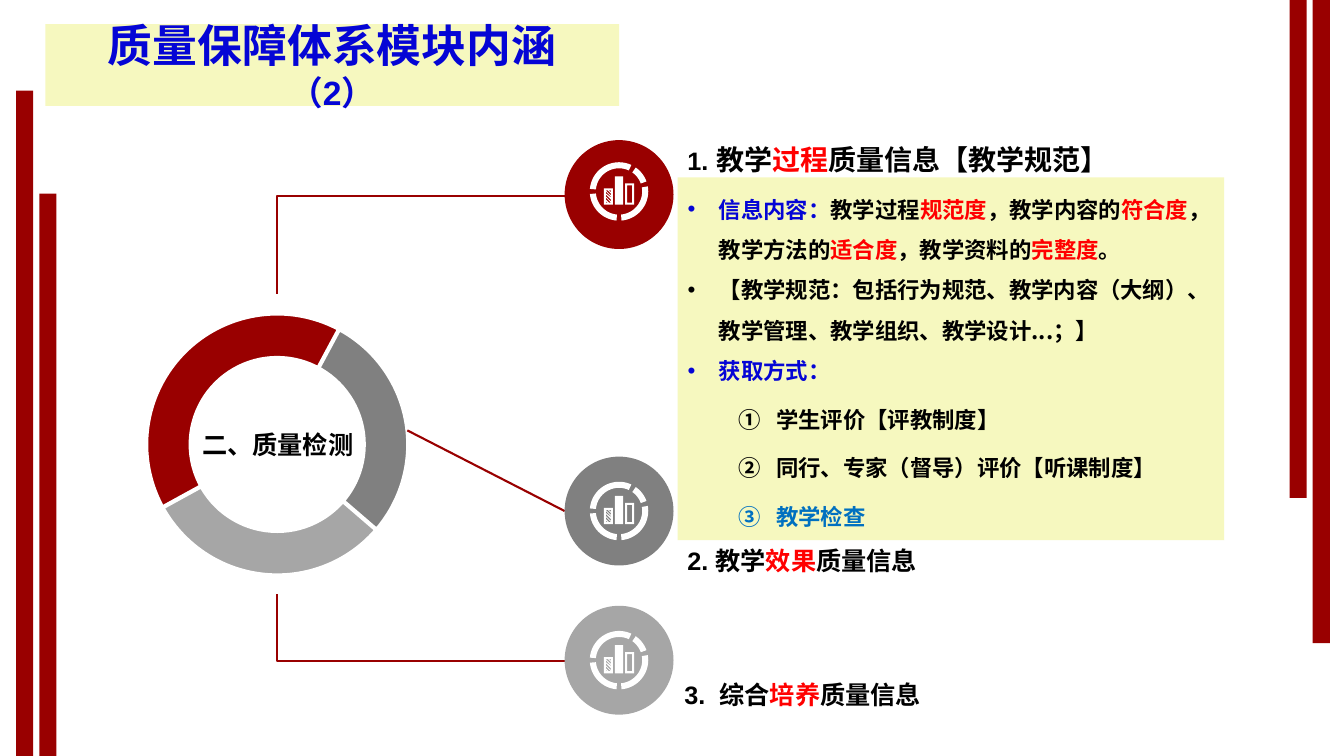
from math import cos, radians, sin

from lxml.etree import SubElement
from pptx import Presentation
from pptx.dml.color import RGBColor
from pptx.enum.shapes import MSO_CONNECTOR, MSO_SHAPE
from pptx.enum.text import MSO_ANCHOR, MSO_AUTO_SIZE, PP_ALIGN
from pptx.oxml.ns import qn
from pptx.util import Inches, Pt

RED_DARK = RGBColor(0x99, 0x00, 0x00)
RED = RGBColor(0xFF, 0x00, 0x00)
GREY_DARK = RGBColor(0x80, 0x80, 0x80)
GREY_LIGHT = RGBColor(0xA6, 0xA6, 0xA6)
CREAM = RGBColor(0xF6, 0xF8, 0xBF)
BLUE = RGBColor(0x05, 0x05, 0xD5)
SKY = RGBColor(0x00, 0x70, 0xC0)
BLACK = RGBColor(0x00, 0x00, 0x00)
WHITE = RGBColor(0xFF, 0xFF, 0xFF)

LATIN = "Arial"
CHINESE = "Noto Sans CJK SC"

BADGE_LEFT, BADGE_SIZE = 5.6, 1.08
RING = (1.45, 3.11, 2.6, 2.6)

SIDE_BARS = [(0.16, 0.9, 6.6), (0.39, 1.92, 5.58), (12.79, 0, 4.94), (13.02, 0, 6.38)]

# top of badge, top of icon, colour
BADGES = [(1.39, 1.61, RED_DARK), (4.53, 4.78, GREY_DARK), (6.01, 6.26, GREY_LIGHT)]

# kind, begin, end
LINKS = [
    (MSO_CONNECTOR.ELBOW, (5.6, 1.94), (2.75, 2.92)),
    (MSO_CONNECTOR.STRAIGHT, (5.6, 5.07), (4.04, 4.27)),
    (MSO_CONNECTOR.ELBOW, (5.6, 6.56), (2.75, 5.89)),
]

# place, size, spans
HEADINGS = [
    ((6.72, 1.36, 4.7, 0.49), 20,
     [("1.", BLACK, 18), (" 教学", BLACK), ("过程", RED), ("质量信息【教学规范】", BLACK)]),
    ((6.72, 5.36, 4.4, 0.4), 18, [("2. 教学", BLACK), ("效果", RED), ("质量信息", BLACK)]),
    ((6.69, 6.69, 4.4, 0.4), 18, [("3.  综合", BLACK), ("培养", RED), ("质量信息", BLACK)]),
]

# level, space after, spans
DETAILS = [
    (0, 0, [("信息内容：", BLUE), ("教学过程", BLACK), ("规范度", RED), ("，教学内容的", BLACK),
            ("符合度", RED), ("，教学方法的", BLACK), ("适合度", RED),
            ("，教学资料的", BLACK), ("完整度", RED), ("。", BLACK)]),
    (0, 0, [("【教学规范：包括行为规范、教学内容（大纲）、"
             "教学管理、教学组织、教学设计...；】", BLACK)]),
    (0, 6, [("获取方式：", BLUE)]),
    (1, 6, [("学生评价【评教制度】", BLACK)]),
    (1, 6, [("同行、专家（督导）评价【听课制度】", BLACK)]),
    (1, 6, [("教学检查", SKY)]),
]

# icon parts, in inches from the icon's corner
ICON_RADIUS, ICON_HOLE = 0.29, 0.23
ICON_ARCS = [(95, 175), (-10, 85), (-55, -20), (185, 295)]
ICON_BARS = [(0.14, 0.26, 0.09, 0.16), (0.25, 0.14, 0.08, 0.28),
             (0.35, 0.21, 0.09, 0.21), (0.37, 0.23, 0.05, 0.17)]
ICON_HATCHES = [
    [(0.16, 0.39), (0.16, 0.4), (0.18, 0.4)],
    [(0.16, 0.35), (0.16, 0.37), (0.19, 0.4), (0.21, 0.4)],
    [(0.16, 0.32), (0.16, 0.34), (0.21, 0.39), (0.21, 0.37)],
    [(0.16, 0.29), (0.16, 0.31), (0.21, 0.35), (0.21, 0.34)],
    [(0.16, 0.28), (0.21, 0.33), (0.21, 0.31), (0.18, 0.28)],
    [(0.19, 0.28), (0.21, 0.3), (0.21, 0.28)],
]


def set_all(target, values):
    for name, value in values.items():
        setattr(target, name, value)


def move(shape, place):
    set_all(shape, dict(zip(("left", "top", "width", "height"), map(Inches, place))))


def paint(shape, colour, outline=None):
    shape.fill.solid()
    shape.fill.fore_color.rgb = colour
    if outline:
        shape.line.color.rgb = outline
        shape.line.width = Pt(3)
    else:
        shape.line.fill.background()
    shape.shadow.inherit = False


def add_shape(page, kind, place, colour, outline=None, adjustments=()):
    shape = page.shapes.add_shape(kind, *map(Inches, place))
    for index, value in enumerate(adjustments):
        shape.adjustments[index] = value
    paint(shape, colour, outline)
    return shape


def set_geometry(placeholder, preset):
    """Give a placeholder its own outline, right after its position."""
    geometry = SubElement(placeholder._element.spPr, qn("a:prstGeom"), prst=preset)
    SubElement(geometry, qn("a:avLst"))


def add_spans(para, spans, size, latin=LATIN):
    """Each span is text and colour, with its own size if it differs."""
    for text, colour, *own_size in spans:
        span = para.add_run()
        span.text = text
        set_all(span.font, {"name": latin, "bold": True,
                            "size": Pt(own_size[0] if own_size else size)})
        span.font.color.rgb = colour
        SubElement(span._r.get_or_add_rPr(), qn("a:ea"), typeface=CHINESE)


def set_bullet(para, level):
    properties = para._p.get_or_add_pPr()
    margin, indent = [(0.31, -0.31), (0.88, -0.38)][level]
    properties.set("marL", str(Inches(margin)))
    properties.set("indent", str(Inches(indent)))
    if level:
        SubElement(properties, qn("a:buFont"), typeface="+mj-lt")
        SubElement(properties, qn("a:buAutoNum"), type="circleNumDbPlain")
    else:
        SubElement(properties, qn("a:buFont"), typeface=LATIN)
        SubElement(properties, qn("a:buChar"), char="•")


def fill_title(title):
    move(title, (0.45, 0.24, 5.69, 0.81))
    set_geometry(title, "roundRect")
    paint(title, CREAM)
    set_all(title.text_frame, {
        "word_wrap": True, "auto_size": MSO_AUTO_SIZE.NONE,
        "vertical_anchor": MSO_ANCHOR.MIDDLE,
        "margin_left": Inches(0.3), "margin_right": Inches(0.3)})
    para = title.text_frame.paragraphs[0]
    para.alignment = PP_ALIGN.CENTER
    add_spans(para, [("质量保障体系模块内涵", BLUE), ("（2）", BLUE, 24)], 32)


def fill_details(body):
    move(body, (6.72, 1.76, 5.42, 3.6))
    set_geometry(body, "rect")
    paint(body, CREAM)
    frame = body.text_frame
    set_all(frame, {"word_wrap": True, "auto_size": MSO_AUTO_SIZE.NONE,
                    "vertical_anchor": MSO_ANCHOR.TOP})
    for index, (level, after, spans) in enumerate(DETAILS):
        para = frame.add_paragraph() if index else frame.paragraphs[0]
        set_all(para, {"level": level, "line_spacing": 1.5, "space_before": Pt(0),
                       "space_after": Pt(after), "alignment": PP_ALIGN.LEFT})
        set_bullet(para, level)
        add_spans(para, spans, 16, CHINESE)


def add_heading(page, place, size, spans):
    box = page.shapes.add_textbox(*map(Inches, place))
    box.text_frame.word_wrap = True
    add_spans(box.text_frame.paragraphs[0], spans, size)


def add_ring(page):
    disc = add_shape(page, MSO_SHAPE.OVAL, (1.27, 2.92, 2.97, 2.97), WHITE)
    disc.text_frame.vertical_anchor = MSO_ANCHOR.MIDDLE
    para = disc.text_frame.paragraphs[0]
    para.alignment = PP_ALIGN.CENTER
    add_spans(para, [("二、质量检测", BLACK)], 18)
    add_shape(page, MSO_SHAPE.DONUT, RING, RED_DARK, WHITE, [0.17])
    add_shape(page, MSO_SHAPE.BLOCK_ARC, RING, GREY_LIGHT, WHITE, [211.17, 90.72, 0.17])
    add_shape(page, MSO_SHAPE.BLOCK_ARC, RING, GREY_DARK, WHITE, [178.95, 24.43, 0.17])


def add_link(page, kind, begin, end):
    link = page.shapes.add_connector(kind, *map(Inches, begin + end))
    link.line.color.rgb = RED_DARK
    link.line.width = Pt(1.5)
    properties = link._element.spPr
    SubElement(properties, qn("a:effectLst"))
    if kind == MSO_CONNECTOR.ELBOW:
        properties.find(qn("a:prstGeom")).set("prst", "bentConnector2")


def arc_outline(start, stop):
    def points(radius, angles):
        return [(ICON_RADIUS + radius * cos(radians(angle)),
                 ICON_RADIUS + radius * sin(radians(angle))) for angle in angles]
    angles = range(start, stop + 1, 5)
    return points(ICON_RADIUS, angles) + points(ICON_HOLE, reversed(angles))


def bar_outline(left, top, width, height):
    right, bottom = left + width, top + height
    return [(left, top), (right, top), (right, bottom), (left, bottom)]


def add_icon(page, left, top):
    outlines = [arc_outline(*arc) for arc in ICON_ARCS]
    outlines += [bar_outline(*bar) for bar in ICON_BARS] + ICON_HATCHES
    outlines = [[(Inches(left + x), Inches(top + y)) for x, y in outline]
                for outline in outlines]
    builder = page.shapes.build_freeform(*outlines[0][0])
    for index, (first, *others) in enumerate(outlines):
        if index:
            builder.move_to(*first)
        builder.add_line_segments(others, close=True)
    paint(builder.convert_to_shape(), WHITE)


def main():
    deck = Presentation()
    set_all(deck, {"slide_width": Inches(13.33), "slide_height": Inches(7.5)})
    page = deck.slides.add_slide(deck.slide_layouts[1])
    for left, top, height in SIDE_BARS:
        add_shape(page, MSO_SHAPE.RECTANGLE, (left, top, 0.17, height), RED_DARK)
    fill_title(page.shapes.title)
    fill_details(page.placeholders[1])
    add_ring(page)
    for link in LINKS:
        add_link(page, *link)
    for top, icon_top, colour in BADGES:
        add_shape(page, MSO_SHAPE.OVAL, (BADGE_LEFT, top, BADGE_SIZE, BADGE_SIZE), colour)
        add_icon(page, BADGE_LEFT + 0.25, icon_top)
    for heading in HEADINGS:
        add_heading(page, *heading)
    deck.save("out.pptx")


if __name__ == "__main__":
    main()
